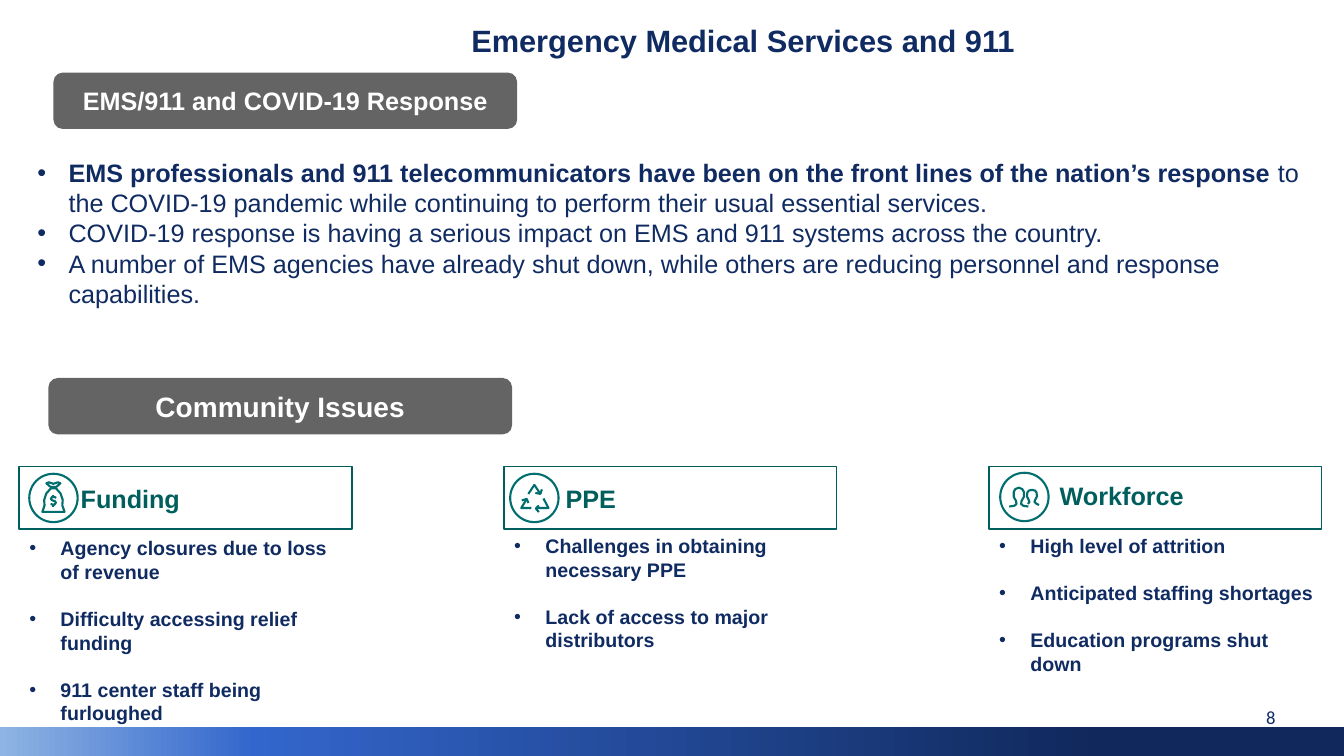
from copy import deepcopy

from lxml import etree
from pptx import Presentation
from pptx.dml.color import RGBColor
from pptx.enum.shapes import MSO_SHAPE
from pptx.enum.text import MSO_ANCHOR, MSO_AUTO_SIZE, PP_ALIGN
from pptx.oxml.ns import qn
from pptx.util import Inches, Pt

RECT, ROUND, OVAL = MSO_SHAPE.RECTANGLE, MSO_SHAPE.ROUNDED_RECTANGLE, MSO_SHAPE.OVAL
TOP, MIDDLE = MSO_ANCHOR.TOP, MSO_ANCHOR.MIDDLE
LEFT, CENTER, RIGHT = PP_ALIGN.LEFT, PP_ALIGN.CENTER, PP_ALIGN.RIGHT
NO_FIT = MSO_AUTO_SIZE.NONE

COLORS = {"navy": "102B62", "grey": "646464", "white": "FFFFFF", "teal": "005E5C",
          "icon": "006E6E"}
FOOTER_STOPS = [(0, "8EB4E3"), (0.19, "3366CC"), (0.82, "10285B")]

# Icon strokes in thousandths of an inch from the icon's centre: (closed, points)
MONEY_BAG = [
    (True, [(-30, -110), (-70, -145), (-45, -155), (0, -140), (45, -155), (70, -145),
            (30, -110)]),
    (True, [(-25, -95), (-70, -45), (-92, 20), (-88, 75), (-110, 138), (110, 138),
            (88, 75), (92, 20), (70, -45), (25, -95)]),
    (False, [(28, 0), (10, -10), (-15, -8), (-25, 10), (-10, 25), (15, 32), (25, 48),
             (10, 68), (-28, 62)]),
    (False, [(0, -28), (0, -10)]),
    (False, [(0, 70), (0, 90)]),
]
RECYCLING = [
    (False, [(-60, -40), (0, -130), (60, -40)]),
    (False, [(10, -50), (60, -40), (75, -85)]),
    (False, [(-30, 100), (-130, 100), (-75, 10)]),
    (False, [(-125, 25), (-75, 10), (-60, 50)]),
    (False, [(90, 5), (140, 100), (20, 100)]),
    (False, [(45, 75), (15, 105), (45, 140)]),
]
PEOPLE = [
    (False, [(-150, 95), (-100, 88), (-78, 70), (-82, 40), (-105, 0), (-105, -50),
             (-90, -78), (-55, -92), (-20, -78), (-5, -50), (-5, 0), (-28, 40),
             (-32, 70), (-10, 88), (40, 95)]),
    (False, [(35, 70), (50, 50), (42, 28), (25, -5), (30, -45), (45, -63), (75, -70),
             (105, -63), (120, -45), (125, -5), (108, 28), (100, 50), (115, 65),
             (145, 80)]),
]

RESPONSE_POINTS = [
    ("EMS professionals and 911 telecommunicators have been on the front lines of the "
     "nation’s response ",
     "to the COVID-19 pandemic while continuing to perform their usual essential services."),
    ("", "COVID-19 response is having a serious impact on EMS and 911 systems across the "
         "country."),
    ("", "A number of EMS agencies have already shut down, while others are reducing "
         "personnel and response capabilities."),
]
# Heading, icon, icon offset (x, y), label offset, label height, list top, list width, points
ISSUES = [
    ("Funding", MONEY_BAG, 0.09, 0.06, 0.61, 0.45, 5.27, 3.33,
     ["Agency closures due to loss of revenue", "Difficulty accessing relief funding",
      "911 center staff being furloughed"]),
    ("PPE", RECYCLING, 0.05, 0.06, 0.61, 0.45, 5.25, 3.44,
     ["Challenges in obtaining necessary PPE", "Lack of access to major distributors"]),
    ("Workforce", PEOPLE, 0.1, 0.05, 0.7, 0.38, 5.25, 3.33,
     ["High level of attrition", "Anticipated staffing shortages",
      "Education programs shut down"]),
]


def rgb(name):
    return RGBColor.from_string(COLORS[name])


def place(shape, left, top, width, height):
    shape.left, shape.top = Inches(left), Inches(top)
    shape.width, shape.height = Inches(width), Inches(height)


def set_font(paragraph, size, color, bold=True, name="Arial"):
    font = paragraph.font
    font.name, font.size, font.bold = name, Pt(size), bold
    font.color.rgb = rgb(color)


def add_panel(slide, kind, box, fill=None, line=None, weight=1.0):
    panel = slide.shapes.add_shape(kind, *map(Inches, box))
    panel.shadow.inherit = False
    style_panel(panel, fill, line, weight)
    return panel


def style_panel(panel, fill, line, weight):
    if fill:
        panel.fill.solid()
        panel.fill.fore_color.rgb = rgb(fill)
    else:
        panel.fill.background()
    if line:
        panel.line.color.rgb = rgb(line)
        panel.line.width = Pt(weight)
    else:
        panel.line.fill.background()


def add_label(slide, box, text, size, color, align=LEFT, inset=0.0, **font):
    label = slide.shapes.add_textbox(*map(Inches, box))
    frame = label.text_frame
    frame.word_wrap, frame.vertical_anchor = True, MIDDLE
    frame.margin_left = frame.margin_right = Inches(inset)
    frame.margin_top = frame.margin_bottom = 0
    paragraph = frame.paragraphs[0]
    paragraph.text, paragraph.alignment = text, align
    set_font(paragraph, size, color, **font)


def fill_list(body, box, points, size, bold, gap=0.0):
    """Bulleted list; each point is a bold lead and the rest of its text."""
    place(body, *box)
    frame = body.text_frame
    frame.auto_size, frame.vertical_anchor, frame.word_wrap = NO_FIT, TOP, True
    for number, (lead, rest) in enumerate(points):
        paragraph = frame.paragraphs[0] if number == 0 else frame.add_paragraph()
        properties = paragraph._p.get_or_add_pPr()
        properties.set("marL", str(Inches(0.31)))
        properties.set("indent", str(-Inches(0.31)))
        etree.SubElement(properties, qn("a:buFont")).set("typeface", "Arial")
        etree.SubElement(properties, qn("a:buChar")).set("char", "•")
        set_font(paragraph, size, "navy", bold)
        paragraph.alignment = LEFT
        paragraph.line_spacing = Pt(size * 1.2)
        paragraph.space_before = Pt(gap if number else 0)
        paragraph.space_after = Pt(0)
        if lead:
            paragraph.add_run().text = lead
            paragraph.runs[0].font.bold = True
        paragraph.add_run().text = rest


def add_title(title):
    place(title, 3.69, 0.16, 7.36, 0.47)
    frame = title.text_frame
    frame.auto_size, frame.vertical_anchor = NO_FIT, MIDDLE
    frame.text = "Emergency Medical Services and 911"
    frame.paragraphs[0].alignment = CENTER
    set_font(frame.paragraphs[0], 22, "navy")


def add_banner(slide, left, top, text, size):
    banner = add_panel(slide, ROUND, (left, top, 4.6, 0.56), fill="grey")
    frame = banner.text_frame
    frame.vertical_anchor = MIDDLE
    frame.text = text
    frame.paragraphs[0].alignment = CENTER
    set_font(frame.paragraphs[0], size, "white")


def add_icon(slide, left, top, strokes, size=0.5):
    ring = 0.02
    add_panel(slide, OVAL, (left + ring / 2, top + ring / 2, size - ring, size - ring),
              line="icon", weight=1.5)
    center = Inches(left + size / 2), Inches(top + size / 2)
    for closed, points in strokes:
        builder = slide.shapes.build_freeform(*points[0], scale=Inches(0.001))
        builder.add_line_segments(points[1:], close=closed)
        stroke = builder.convert_to_shape(*center)
        stroke.shadow.inherit = False
        style_panel(stroke, None, "icon", 1.5)


def add_issue(slide, body, left, issue):
    heading, icon, icon_x, icon_y, label_x, label_height, list_top, width, points = issue
    top = 4.63
    add_panel(slide, RECT, (left, top, 3.3, 0.62), line="teal")
    add_label(slide, (left + label_x, top + 0.09, 2.52, label_height), heading, 18, "teal")
    add_icon(slide, left + icon_x, top + icon_y, icon)
    fill_list(body, (left, list_top, width, 7.26 - list_top),
              [("", point) for point in points], 14, True, gap=16.8)


def add_footer(slide):
    add_label(slide, (12, 6.97, 0.78, 0.28), "8", 13.3, "navy", RIGHT, 0.13,
              bold=False, name="Calibri")
    bar = add_panel(slide, RECT, (0, 7.21, 13.33, 0.29))
    bar.fill.gradient()
    bar.fill.gradient_angle = 0
    stop_list = bar._element.spPr.find(".//" + qn("a:gsLst"))
    stop_list.append(deepcopy(stop_list[-1]))
    for stop, (position, color) in zip(bar.fill.gradient_stops, FOOTER_STOPS):
        stop.position = position
        stop.color.rgb = RGBColor.from_string(color)


def main():
    deck = Presentation()
    deck.slide_width, deck.slide_height = Inches(13.33), Inches(7.5)
    # The Comparison layout has a title and four bodies
    slide = deck.slides.add_slide(deck.slide_layouts[4])
    title, first, response, second, third = slide.placeholders

    add_footer(slide)
    add_title(title)
    add_banner(slide, 0.53, 0.72, "EMS/911 and COVID-19 Response", 18)
    fill_list(response, (0.27, 1.51, 12.77, 1.62), RESPONSE_POINTS, 18, False)
    add_banner(slide, 0.48, 3.75, "Community Issues", 20)
    for column, (body, issue) in enumerate(zip((first, second, third), ISSUES)):
        add_issue(slide, body, 0.19 + 4.81 * column, issue)
    deck.save("out.pptx")


if __name__ == "__main__":
    main()
